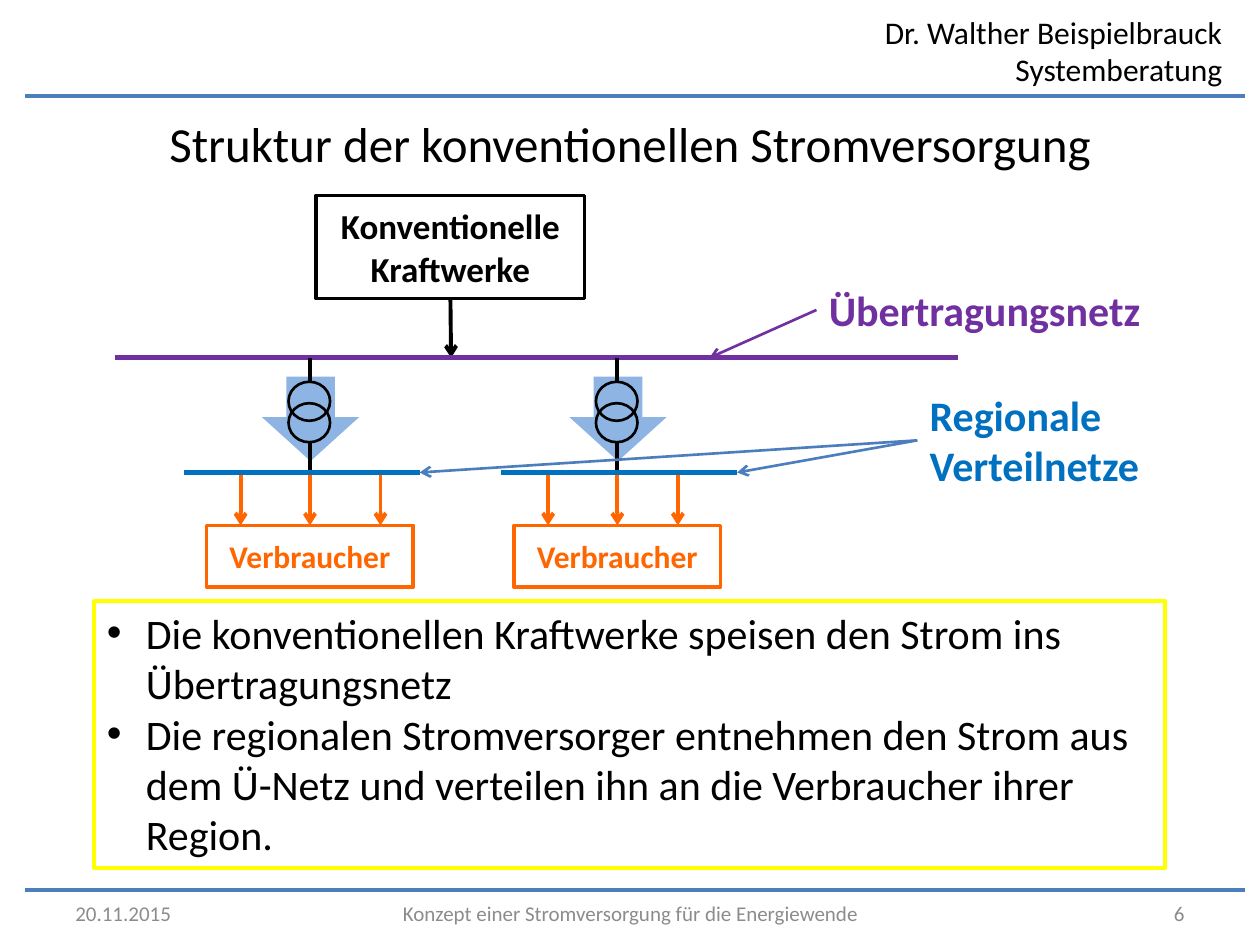
import pptx
import pptx.util
import pptx.dml.color
import pptx.enum.shapes
import pptx.enum.text
import pptx.oxml
import pptx.oxml.ns

Inches = pptx.util.Inches
Pt = pptx.util.Pt
Kind = pptx.enum.shapes.MSO_SHAPE
Align = pptx.enum.text.PP_ALIGN
Anchor = pptx.enum.text.MSO_ANCHOR
qn = pptx.oxml.ns.qn

COLORS = {
    "black": "000000", "gray": "8C8C8C", "rule": "4B7EBC",
    "purple": "7030A0", "blue": "0070C0", "orange": "FF6600",
    "pale": "8EB4E3", "yellow": "FFFF00",
}
BOLD = {"bold": True}


def paint(color):
    return pptx.dml.color.RGBColor.from_string(COLORS[color])


def assign(target, values):
    for key, value in values.items():
        setattr(target, key, value)


def write(shape, lines, size, color, align=Align.LEFT, anchor=Anchor.TOP, font={}):
    frame = shape.text_frame
    assign(frame, {"word_wrap": True, "vertical_anchor": anchor})
    frame.text = "\n".join(lines)
    for para in frame.paragraphs:
        para.alignment = align
        for run in para.runs:
            assign(run.font, {"name": "Calibri", "size": Pt(size), **font})
            run.font.color.rgb = paint(color)


def label(slide, box, lines, size, color, **style):
    shape = slide.shapes.add_textbox(*map(Inches, box))
    write(shape, lines, size, color, **style)
    return shape


def draw(slide, kind, box, fill=None, line=None, width=2):
    shape = slide.shapes.add_shape(kind, *map(Inches, box))
    shape.shadow.inherit = False
    for part, color in ((shape.fill, fill), (shape.line.fill, line)):
        if color:
            part.solid()
            part.fore_color.rgb = paint(color)
        else:
            part.background()
    if line:
        shape.line.width = Pt(width)
    return shape


def link(slide, start, end, color, width=2.25, arrow=False, source=None, target=None):
    points = map(Inches, (*start, *end))
    line = slide.shapes.add_connector(pptx.enum.shapes.MSO_CONNECTOR.STRAIGHT, *points)
    line.line.color.rgb = paint(color)
    line.line.width = Pt(width)
    if arrow:
        tip = pptx.oxml.parse_xml(f'<a:tailEnd {pptx.oxml.ns.nsdecls("a")} type="arrow"/>')
        line.line._get_or_add_ln().append(tip)
    props = line._element.spPr
    props.append(props.makeelement(qn("a:effectLst"), {}))
    if source:
        line.begin_connect(*source)
    if target:
        line.end_connect(*target)


def bullet(shape, indent):
    for para in shape.text_frame.paragraphs:
        props = para._p.get_or_add_pPr()
        props.set("marL", str(Inches(indent)))
        props.set("indent", str(-Inches(indent)))
        props.append(props.makeelement(qn("a:buFont"), {"typeface": "Arial"}))
        props.append(props.makeelement(qn("a:buChar"), {"char": "•"}))


def branch(slide, mid, right, bar):
    user = draw(slide, Kind.RECTANGLE, (mid - 0.82, 4.17, 1.64, 0.49), line="orange")
    write(user, ["Verbraucher"], 18, "orange", Align.CENTER, Anchor.MIDDLE, BOLD)
    for x in (mid - 0.55, mid, right):
        target = (user, 0) if x == mid else None
        link(slide, (x, 3.75), (x, 4.17), "orange", arrow=True, target=target)
    down = draw(slide, Kind.DOWN_ARROW, (mid - 0.38, 2.99, 0.77, 0.67), fill="pale")
    down.adjustments[1] = 0.52
    for top in (3.03, 3.2):
        draw(slide, Kind.OVAL, (mid - 0.17, top, 0.33, 0.31), line="black", width=1.5)
    for top, low in ((2.84, 3.03), (3.51, 3.74)):
        link(slide, (mid, top), (mid, low), "black")
    link(slide, (bar, 3.75), (bar + 1.87, 3.75), "blue", 3)


def frame(slide):
    label(slide, (6.73, 0.05, 3.07, 0.71), ["Dr. Walther Beispielbrauck\vSystemberatung"],
          18, "black", align=Align.RIGHT)
    for y in (0.76, 7.06):
        link(slide, (9.88, y), (0.2, y), "rule")
    for left, width, text, align in (
        (0.5, 2.06, "20.11.2015", Align.LEFT),
        (7.44, 2.06, "6", Align.RIGHT),
        (2.72, 4.57, "Konzept einer Stromversorgung für die Energiewende", Align.CENTER),
    ):
        label(slide, (left, 7.05, width, 0.4), [text], 12, "gray",
              align=align, anchor=Anchor.MIDDLE)
    label(slide, (0.5, 0.85, 9, 0.61), ["Struktur der konventionellen Stromversorgung"],
          28, "black", align=Align.CENTER)


def main():
    deck = pptx.Presentation()
    assign(deck, {"slide_width": Inches(10), "slide_height": Inches(7.5)})
    slide = deck.slides.add_slide(deck.slide_layouts[6])
    frame(slide)

    grid = label(slide, (6.48, 2.21, 2.77, 0.5), ["Übertragungsnetz"], 24, "purple", font=BOLD)
    plant = draw(slide, Kind.RECTANGLE, (2.51, 1.55, 2.13, 0.82), line="black")
    write(plant, ["Konventionelle Kraftwerke"], 20, "black", Align.CENTER, Anchor.MIDDLE, BOLD)
    link(slide, (3.58, 2.37), (3.58, 2.84), "black", arrow=True, source=(plant, 2))
    link(slide, (6.48, 2.46), (5.63, 2.84), "purple", 1.5, True, (grid, 1))
    link(slide, (0.91, 2.84), (7.6, 2.84), "purple", 3)

    for mid, right, bar in ((2.46, 3.02, 1.46), (4.9, 5.38, 3.98)):
        branch(slide, mid, right, bar)

    local = label(slide, (7.28, 3.04, 1.97, 0.91), ["Regionale", "Verteilnetze"],
                  24, "blue", font=BOLD)
    for x in (5.85, 3.33):
        link(slide, (7.28, 3.5), (x, 3.75), "rule", 1.5, True, (local, 1))

    notes = draw(slide, Kind.RECTANGLE, (0.75, 4.77, 8.5, 2.12), line="yellow", width=2.25)
    write(notes, [
        "Die konventionellen Kraftwerke speisen den Strom ins Übertragungsnetz",
        "Die regionalen Stromversorger entnehmen den Strom aus dem Ü-Netz und "
        "verteilen ihn an die Verbraucher ihrer Region.",
    ], 24, "black")
    bullet(notes, 0.31)
    deck.save("out.pptx")


if __name__ == "__main__":
    main()
